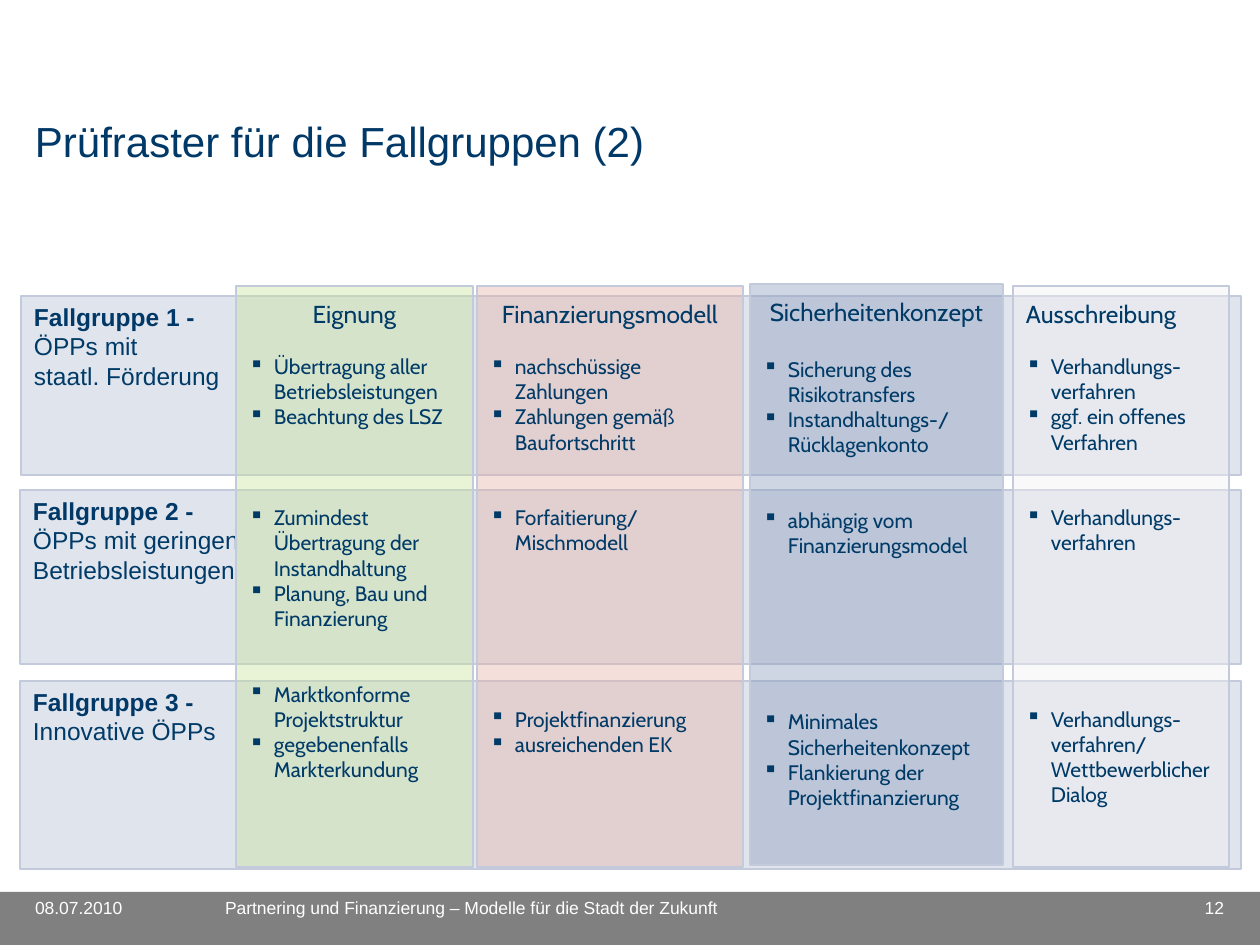
"""Build the slide with the review grid for the three case groups."""
import dataclasses

import pptx
import pptx.dml.color
import pptx.enum.shapes
import pptx.enum.text
import pptx.oxml.ns
import pptx.util
from lxml import etree

ALIGN = pptx.enum.text.PP_ALIGN
LEFT, MID, RIGHT = ALIGN.LEFT, ALIGN.CENTER, ALIGN.RIGHT


@dataclasses.dataclass(frozen=True)
class Theme:
    navy: str = "003867"
    ink: str = "003A67"
    edge: str = "C2CADC"
    band: str = "E0E4ED"
    foot: str = "808080"
    white: str = "FFFFFF"
    sans: str = "Arial"
    body: str = "Cabin"
    title: int = 24
    head: int = 14
    item: int = 12
    note: int = 10
    line: float = 14.4


T = Theme()
SCALE = 914400 / 126
WIDE, HIGH = 1260, 945
INDENT = 25
COL_H = 581

TITLE = ("Prüfraster für die Fallgruppen (2)", 35, 115, 1186, 134)
ROWS = [
    ((21, 296, 1220, 179), ["Fallgruppe 1 -", "ÖPPs mit", "staatl. Förderung"]),
    ((20, 490, 1221, 174), ["Fallgruppe 2 -", "ÖPPs mit geringen", "Betriebsleistungen"]),
    ((20, 681, 1221, 188), ["Fallgruppe 3 -", "Innovative ÖPPs"]),
]
COLS = [
    ("Eignung", MID, (236, 286, 237), "C9E399", 40, [
        (1, ["Übertragung aller Betriebsleistungen", "Beachtung des LSZ"]),
        (3, ["Zumindest Übertragung der Instandhaltung",
             "Planung, Bau und Finanzierung"]),
        (2, ["Marktkonforme Projektstruktur", "gegebenenfalls Markterkundung"]),
    ]),
    ("Finanzierungsmodell", MID, (477, 286, 266), "E5B2A7", 41, [
        (1, ["nachschüssige Zahlungen", "Zahlungen gemäß Baufortschritt"]),
        (2, ["Forfaitierung/\nMischmodell"]),
        (6, ["Projektfinanzierung", "ausreichenden EK"]),
    ]),
    ("Sicherheitenkonzept", MID, (750, 284, 253), "8A9DBB", 41, [
        (1.18, ["Sicherung des Risikotransfers", "Instandhaltungs-/ Rücklagenkonto"]),
        (2, ["abhängig vom Finanzierungsmodel"]),
        (6, ["Minimales Sicherheitenkonzept", "Flankierung der Projektfinanzierung"]),
    ]),
    ("Ausschreibung", LEFT, (1013, 286, 216), "F2F2F2", 41, [
        (1, ["Verhandlungs-verfahren", "ggf. ein offenes Verfahren"]),
        (2, ["Verhandlungs-verfahren"]),
        (6, ["Verhandlungs-\nverfahren/\nWettbewerblicher Dialog"]),
    ]),
]
FOOT = [
    ("12", 1129, 95, RIGHT),
    ("08.07.2010", 35, 168, LEFT),
    ("Partnering und Finanzierung – Modelle für die Stadt der Zukunft", 225, 878, LEFT),
]


def px(*nums):
    return [pptx.util.Emu(round(n * SCALE)) for n in nums]


def rgb(code):
    return pptx.dml.color.RGBColor.from_string(code)


def node(parent, tag, **attrs):
    return etree.SubElement(parent, pptx.oxml.ns.qn(tag), **attrs)


def setup(shape, pad_x, pad_y):
    frame = shape.text_frame
    frame.word_wrap = True
    frame.vertical_anchor = pptx.enum.text.MSO_ANCHOR.TOP
    frame.margin_left = frame.margin_right = px(pad_x)[0]
    frame.margin_top = frame.margin_bottom = px(pad_y)[0]
    return frame


def rect(slide, place, fill, line=None, alpha=None):
    shape = slide.shapes.add_shape(pptx.enum.shapes.MSO_SHAPE.RECTANGLE, *px(*place))
    shape.shadow.inherit = False
    shape.fill.solid()
    shape.fill.fore_color.rgb = rgb(fill)
    if alpha:
        color = shape.fill._xPr.find(".//" + pptx.oxml.ns.qn("a:srgbClr"))
        node(color, "a:alpha", val=str(alpha * 1000))
    if line:
        shape.line.color.rgb = rgb(T.edge)
        shape.line.width = pptx.util.Pt(line)
    else:
        shape.line.fill.background()
    return shape


def write(frame, text, size, color, face, align=LEFT, bold=False, gap=0, bullet=False):
    para = frame.paragraphs[0]
    if para.runs:
        para = frame.add_paragraph()
    para.alignment = align
    if gap:
        para.space_before = pptx.util.Pt(gap)
    if bullet:
        props = para._p.get_or_add_pPr()
        props.set("marL", str(px(INDENT)[0]))
        props.set("indent", str(px(-INDENT)[0]))
        node(props, "a:buChar", char="▪")
    for num, part in enumerate(text.split("\n")):
        if num:
            para.add_line_break()
        run = para.add_run()
        run.text = part
        run.font.size = pptx.util.Pt(size)
        run.font.name = face
        run.font.bold = bold
        run.font.color.rgb = rgb(color)


def label(slide, text, place, size, color, align=LEFT):
    frame = setup(slide.shapes.add_textbox(*px(*place)), 0, 0)
    write(frame, text, size, color, T.sans, align)


def row(slide, place, lines):
    frame = setup(rect(slide, place, T.band, 1), 13, 6)
    for num, text in enumerate(lines):
        color = T.ink if num else T.navy
        write(frame, text, T.head, color, T.sans, bold=num == 0)


def column(slide, head, align, place, fill, alpha, groups):
    frame = setup(rect(slide, (*place, COL_H), fill, 1.25, alpha), 13, 13)
    write(frame, head, T.head, T.ink, T.body, align)
    for skip, items in groups:
        for num, text in enumerate(items):
            gap = 0 if num else round(skip * T.line, 1)
            write(frame, text, T.item, T.ink, T.body, gap=gap, bullet=True)


def main():
    deck = pptx.Presentation()
    deck.slide_width, deck.slide_height = px(WIDE, HIGH)
    slide = deck.slides.add_slide(deck.slide_layouts[6])
    rect(slide, (0, 892, WIDE, 53), T.foot)
    for place, lines in ROWS:
        row(slide, place, lines)
    text, *place = TITLE
    label(slide, text, place, T.title, T.navy)
    for spec in COLS:
        column(slide, *spec)
    for text, left, width, align in FOOT:
        label(slide, text, (left, 897, width, 42), T.note, T.white, align)
    deck.save("out.pptx")


if __name__ == "__main__":
    main()
